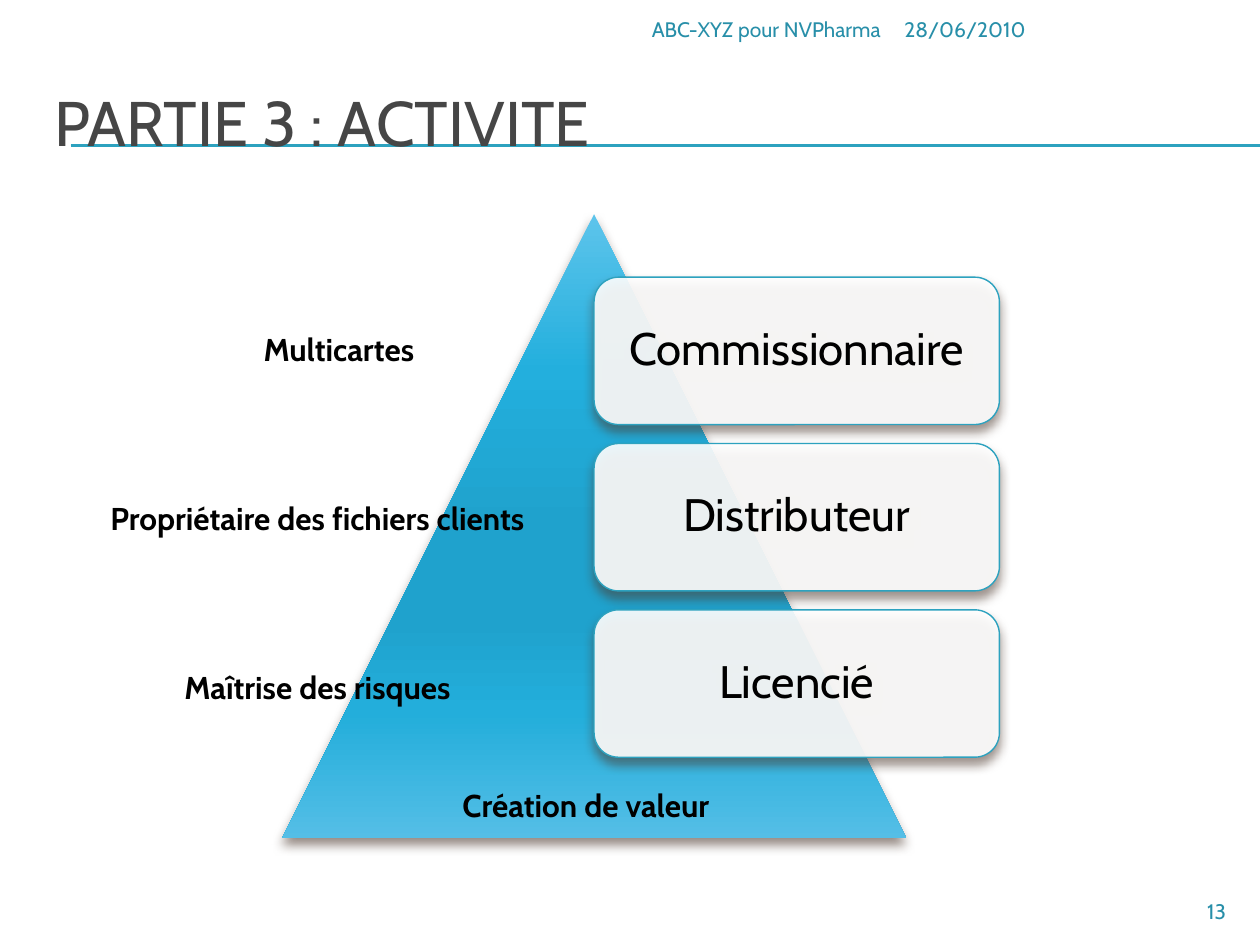
from lxml import etree
from pptx import Presentation
from pptx.dml.color import RGBColor
from pptx.enum import shapes, text
from pptx.oxml import parse_xml
from pptx.oxml.ns import nsdecls, qn
from pptx.util import Inches, Pt

FONT = "Cabin"
TEAL, INK, GREY, BLACK = "2DA2BF", "288FA9", "464646", "000000"
LEFT, MID, RIGHT = text.PP_ALIGN.LEFT, text.PP_ALIGN.CENTER, text.PP_ALIGN.RIGHT
STOPS = [(0, "5DC4EB"), (25, "23AFDD"), (50, "1FA2CD"),
         (65, "1FA2CD"), (80, "23AEDB"), (100, "54BEE6")]


def color(hexa):
    return RGBColor.from_string(hexa)


def write(frame, words, size, hexa, align=LEFT, bold=False):
    """Add one styled run to the first paragraph of a frame."""
    frame.word_wrap = True
    para = frame.paragraphs[0]
    para.alignment = align
    run = para.add_run()
    run.text = words
    font = run.font
    font.name, font.size, font.bold = FONT, Pt(size), bold
    font.color.rgb = color(hexa)
    return para


def label(slide, box, words, size, hexa, align, bold=False):
    frame = slide.shapes.add_textbox(*map(Inches, box)).text_frame
    write(frame, words, size, hexa, align, bold)


def shade(shape):
    """Give a shape a soft shadow below it."""
    shape.shadow.inherit = False
    effects = shape._element.spPr.find(qn("a:effectLst"))
    effects.append(parse_xml(
        f'<a:outerShdw {nsdecls("a")} blurRad="{Pt(6)}" dist="{Pt(4)}" '
        'dir="5400000" rotWithShape="0"><a:srgbClr val="4E3B30">'
        '<a:alpha val="60000"/></a:srgbClr></a:outerShdw>'))


def heading(slide, box, words):
    """Place the title over a double rule that runs to the slide's edge."""
    title = slide.shapes.title
    title.left, title.top, title.width, title.height = map(Inches, box)
    frame = title.text_frame
    frame.vertical_anchor = text.MSO_ANCHOR.MIDDLE
    write(frame, words, 36, GREY)
    left, top = box[:2]
    for drop in (0.65, 0.66):
        y = Inches(top + drop)
        rule = slide.shapes.add_connector(
            shapes.MSO_CONNECTOR.STRAIGHT, Inches(left + 0.23), y, Inches(10), y)
        rule.line.color.rgb = color(TEAL)
        rule.line.width = Pt(0.75)
        etree.SubElement(rule._element.spPr, qn("a:effectLst"))
        title._element.addprevious(rule._element)


def peak(slide, box):
    """Draw the pyramid with its vertical blend."""
    shape = slide.shapes.add_shape(
        shapes.MSO_SHAPE.ISOSCELES_TRIANGLE, *map(Inches, box))
    shape.line.fill.background()
    shape.fill.gradient()
    shape.fill.gradient_angle = 270
    stops = shape._element.spPr.find(qn("a:gradFill")).find(qn("a:gsLst"))
    for old in list(stops):
        stops.remove(old)
    for place, hexa in STOPS:
        stop = etree.SubElement(stops, qn("a:gs"), pos=str(place * 1000))
        etree.SubElement(stop, qn("a:srgbClr"), val=hexa)
    shade(shape)


def card(slide, box, words):
    shape = slide.shapes.add_shape(
        shapes.MSO_SHAPE.ROUNDED_RECTANGLE, *map(Inches, box))
    shape.fill.solid()
    shape.fill.fore_color.rgb = color("FFFFFF")
    tint = shape._element.spPr.find(qn("a:solidFill"))[0]
    etree.SubElement(tint, qn("a:alpha"), val="90000")
    shape.line.color.rgb = color(TEAL)
    shape.line.width = Pt(0.79)
    shade(shape)
    frame = shape.text_frame
    frame.vertical_anchor = text.MSO_ANCHOR.MIDDLE
    frame.margin_left = frame.margin_right = Inches(0.11)
    frame.margin_top = frame.margin_bottom = Inches(0.11)
    write(frame, words, 26, BLACK, MID).line_spacing = 0.9


def pyramid(slide, box, names):
    """Draw the pyramid and stack the cards from its axis rightwards."""
    left, top, width, height = box
    peak(slide, box)
    for i, name in enumerate(names):
        card(slide, (left + width / 2, top + 0.5 + i * 1.32,
                     width * 0.65, 1.17), name)


def notes(slide, items):
    """Write the bold remarks beside and on the pyramid."""
    for left, top, words in items:
        label(slide, (left, top, 3.86, 0.4), words, 18, BLACK, MID, True)


def margins(slide):
    """Write the header line and the page number."""
    for box, words, align in [
            ((7.08, 0.08, 2.75, 0.32), "28/06/2010", LEFT),
            ((3.92, 0.08, 3.17, 0.32), "ABC-XYZ pour NVPharma", RIGHT),
            ((9, 7.08, 0.83, 0.27), "13", RIGHT)]:
        label(slide, box, words, 12, INK, align)


def main():
    deck = Presentation()
    deck.slide_width, deck.slide_height = Inches(10), Inches(7.5)
    slide = deck.slides.add_slide(deck.slide_layouts[5])
    heading(slide, (0.33, 0.5, 9.5, 0.92), "PARTIE 3 : ACTIVITE")
    pyramid(slide, (2.24, 1.7, 4.95, 4.95),
            ["Commissionnaire", "Distributeur", "Licencié"])
    margins(slide)
    notes(slide, [(2.72, 6.19, "Création de valeur"),
                  (0.59, 3.91, "Propriétaire des fichiers clients"),
                  (0.76, 2.57, "Multicartes"),
                  (0.59, 5.25, "Maîtrise des risques")])
    deck.save("out.pptx")


if __name__ == "__main__":
    main()
